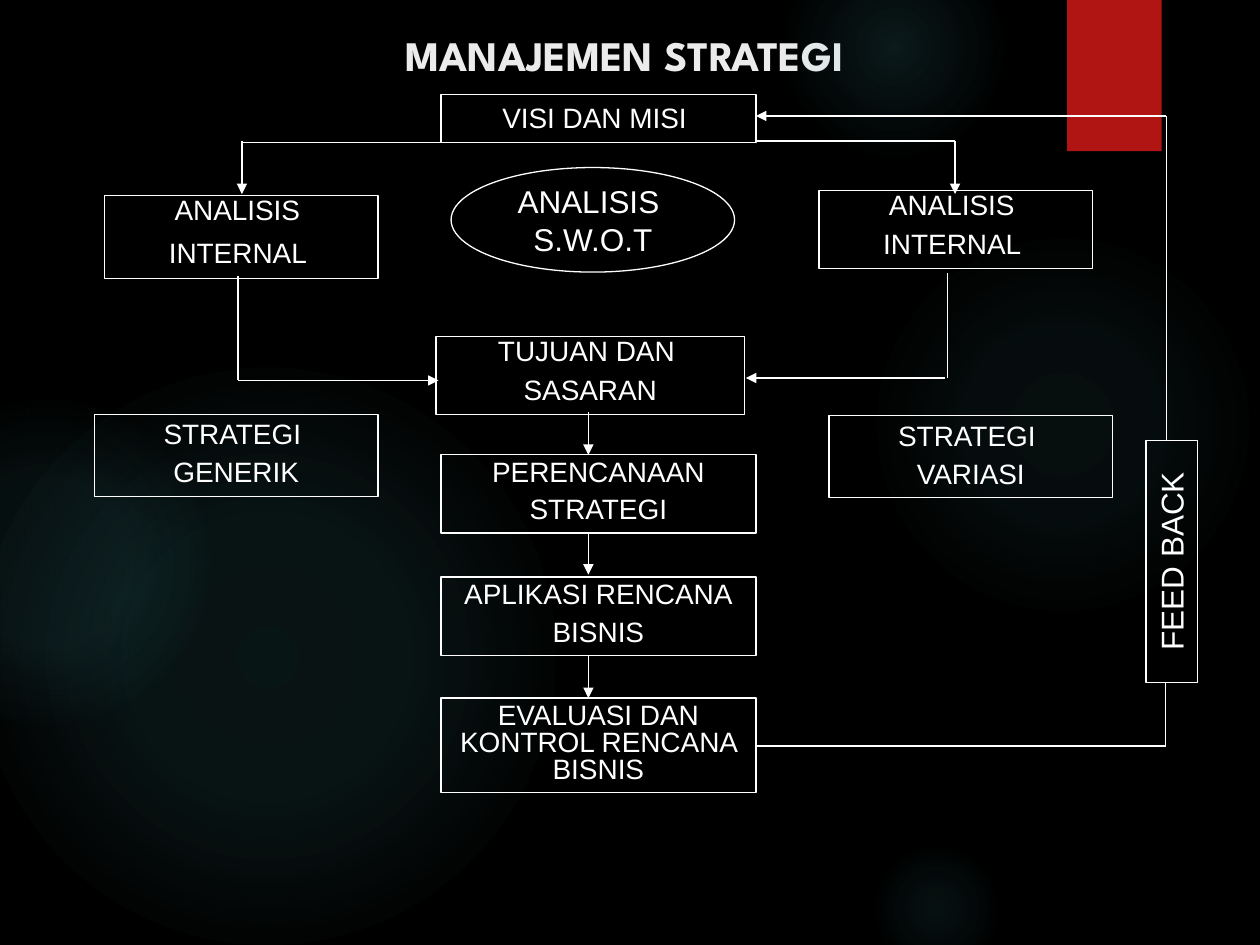
from lxml import etree
from pptx import Presentation
from pptx.dml.color import RGBColor
from pptx.enum.shapes import MSO_CONNECTOR as Link, MSO_SHAPE as Form
from pptx.enum.text import MSO_ANCHOR as Anchor, PP_ALIGN as Align
from pptx.oxml import parse_xml
from pptx.oxml.ns import nsdecls, qn
from pptx.util import Emu, Pt

BLACK = RGBColor(0x00, 0x00, 0x00)
WHITE = RGBColor(0xFF, 0xFF, 0xFF)
TITLE_GREY = RGBColor(0xEB, 0xEB, 0xEB)
RED = RGBColor(0xB0, 0x15, 0x13)
TEAL = RGBColor(0x50, 0xB9, 0xC1)

GLOWS = [
    (689, 183, 308, ((0, 7), (36, 6), (69, 0))),
    (622, -50, 175, ((0, 14), (36, 7), (73, 0))),
    (689, 667, 108, ((0, 9), (36, 5), (66, 0))),
    (-17, 292, 458, ((0, 11), (36, 10), (75, 0))),
    (-92, 317, 258, ((0, 8), (36, 8), (72, 0))),
]
BOXES = [
    ((350, 75, 250, 38), [("VISI DAN MISI ", 1, 0)]),
    ((650, 151, 217, 62), [("ANALISIS ", 0.7, 0), ("INTERNAL ", 0.7, 9)]),
    ((83, 155, 217, 66), [("ANALISIS ", 0.7, 0), ("INTERNAL ", 0.7, 11)]),
    ((346, 267, 245, 62), [("TUJUAN DAN ", 0.7, 0), ("SASARAN", 0.7, 9)]),
    ((350, 361, 250, 62), [("PERENCANAAN", 0.8, 0), ("STRATEGI", 0.6, 9)]),
    ((350, 458, 250, 62), [("APLIKASI RENCANA", 0.8, 0), ("BISNIS", 0.6, 9)]),
    ((350, 554, 250, 75), [("EVALUASI DAN KONTROL RENCANA BISNIS", 0.8, 0)]),
    ((658, 330, 225, 65), [("STRATEGI ", 0.9, 0), ("VARIASI", 0.6, 9)]),
    ((75, 329, 225, 65), [("STRATEGI ", 0.9, 0), ("GENERIK", 0.6, 9)]),
]
LINES = [
    (192, 113, 350, 113),
    (600, 112, 758, 112),
    (926, 92, 926, 350),
    (600, 592, 925, 592),
    (925, 542, 925, 592),
    (189, 219, 189, 302),
    (752, 217, 752, 300),
]
ARROWS = [
    (192, 112, 192, 154),
    (758, 112, 758, 154),
    (925, 92, 600, 92),
    (189, 302, 348, 302),
    (750, 300, 592, 300),
    (467, 327, 467, 361),
    (467, 423, 467, 456),
    (467, 520, 467, 554),
]


class Diagram:
    """Draws the elements of one slide in a shared style, at 100 px to the inch."""

    scale = 9144
    font = "Arial"
    stroke = Pt(0.75)

    def __init__(self, page):
        self.page = page
        page.background.fill.solid()
        page.background.fill.fore_color.rgb = BLACK

    def px(self, *lengths):
        return [Emu(length * self.scale) for length in lengths]

    def shape(self, form, place, fill=None, outlined=False):
        shape = self.page.shapes.add_shape(form, *self.px(*place))
        shape.shadow.inherit = False
        if fill is None:
            shape.fill.background()
        else:
            shape.fill.solid()
            shape.fill.fore_color.rgb = fill
        if outlined:
            shape.line.color.rgb = WHITE
            shape.line.width = self.stroke
        else:
            shape.line.fill.background()
        return shape

    def glow(self, left, top, size, stops):
        shape = self.shape(Form.OVAL, (left, top, size, size))
        marks = "".join(
            f'<a:gs pos="{place * 1000}"><a:srgbClr val="{TEAL}">'
            f'<a:alpha val="{opacity * 1000}"/></a:srgbClr></a:gs>'
            for place, opacity in stops
        )
        gradient = parse_xml(
            f'<a:gradFill {nsdecls("a")}><a:gsLst>{marks}</a:gsLst><a:path path="circle">'
            '<a:fillToRect l="50000" t="50000" r="50000" b="50000"/></a:path></a:gradFill>'
        )
        properties = shape._element.spPr
        properties.replace(properties.find(qn("a:noFill")), gradient)

    def text(self, frame, lines, size, color=WHITE, font=None, bold=False):
        for index, (words, spacing, before) in enumerate(lines):
            para = frame.add_paragraph() if index else frame.paragraphs[0]
            para.alignment = Align.CENTER
            para.line_spacing = spacing
            para.space_before = Pt(before)
            span = para.add_run()
            span.text = words
            span.font.name = font or self.font
            span.font.size = Pt(size)
            span.font.bold = bold
            span.font.color.rgb = color

    def title(self, place, words):
        title = self.page.shapes.title
        title.left, title.top, title.width, title.height = self.px(*place)
        title.text_frame.vertical_anchor = Anchor.MIDDLE
        self.text(title.text_frame, [(words, 1, 0)], 24, TITLE_GREY, "League Spartan", True)

    def box(self, place, lines, size=16, rotation=0):
        box = self.shape(Form.RECTANGLE, place, outlined=True)
        box.rotation = rotation
        box.text_frame.word_wrap = True
        box.text_frame.vertical_anchor = Anchor.TOP
        self.text(box.text_frame, lines, size)

    def oval(self, place, lines):
        oval = self.shape(Form.OVAL, place, BLACK, outlined=True)
        oval.text_frame.word_wrap = False
        oval.text_frame.vertical_anchor = Anchor.MIDDLE
        self.text(oval.text_frame, lines, 18)

    def line(self, ends, arrow=False):
        line = self.page.shapes.add_connector(Link.STRAIGHT, *self.px(*ends))
        line.line.color.rgb = WHITE
        line.line.width = self.stroke
        properties = line._element.spPr
        if arrow:
            etree.SubElement(properties.find(qn("a:ln")), qn("a:tailEnd"), type="triangle")
        etree.SubElement(properties, qn("a:effectLst"))


def main():
    deck = Presentation()
    deck.slide_width, deck.slide_height = Emu(9144000), Emu(6858000)
    diagram = Diagram(deck.slides.add_slide(deck.slide_layouts[5]))
    for glow in GLOWS:
        diagram.glow(*glow)
    diagram.shape(Form.RECTANGLE, (847, 0, 75, 120), RED)
    diagram.title((50, 17, 900, 53), "MANAJEMEN STRATEGI ")
    for place, lines in BOXES:
        diagram.box(place, lines)
    diagram.oval((358, 133, 225, 83), [("ANALISIS ", 1, 0), ("S.W.O.T", 1, 0)])
    diagram.box((834, 425, 192, 41), [("FEED BACK", 1, 0)], 18, 270)
    for ends in LINES:
        diagram.line(ends)
    for ends in ARROWS:
        diagram.line(ends, arrow=True)
    deck.save("out.pptx")


if __name__ == "__main__":
    main()
